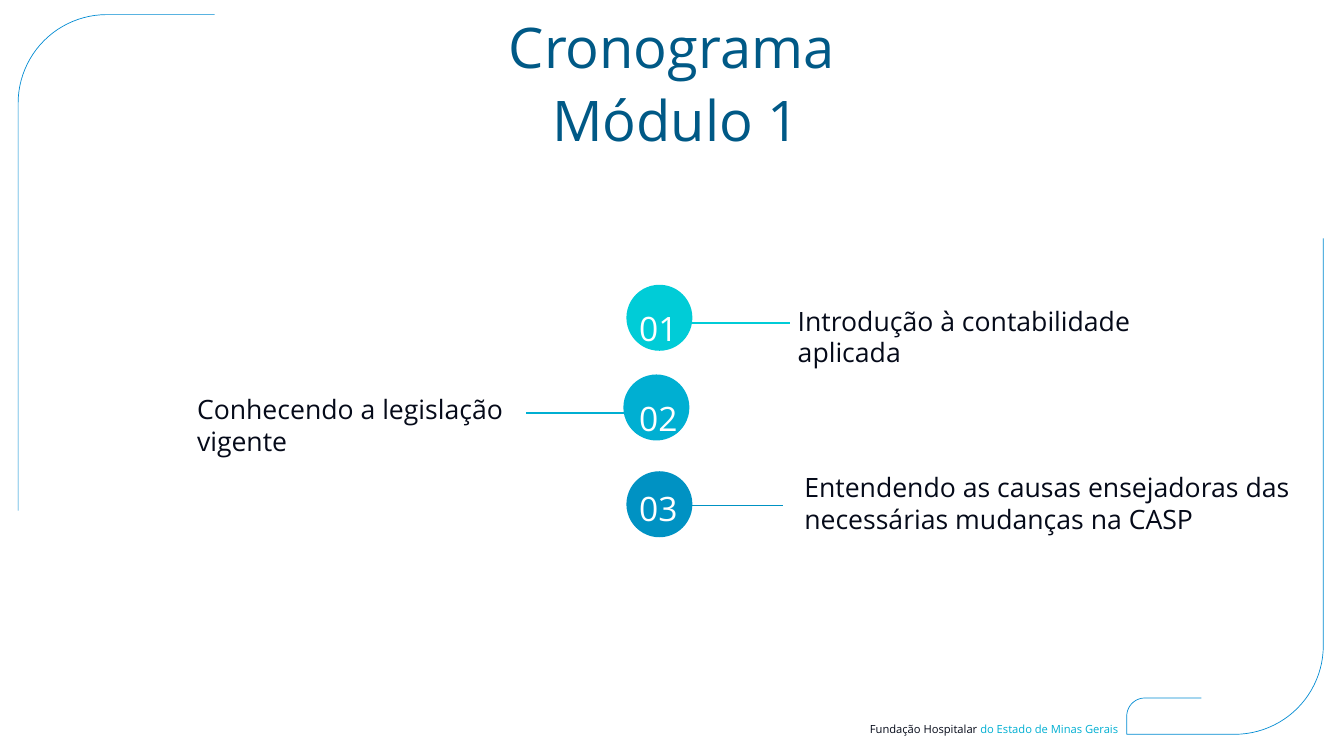
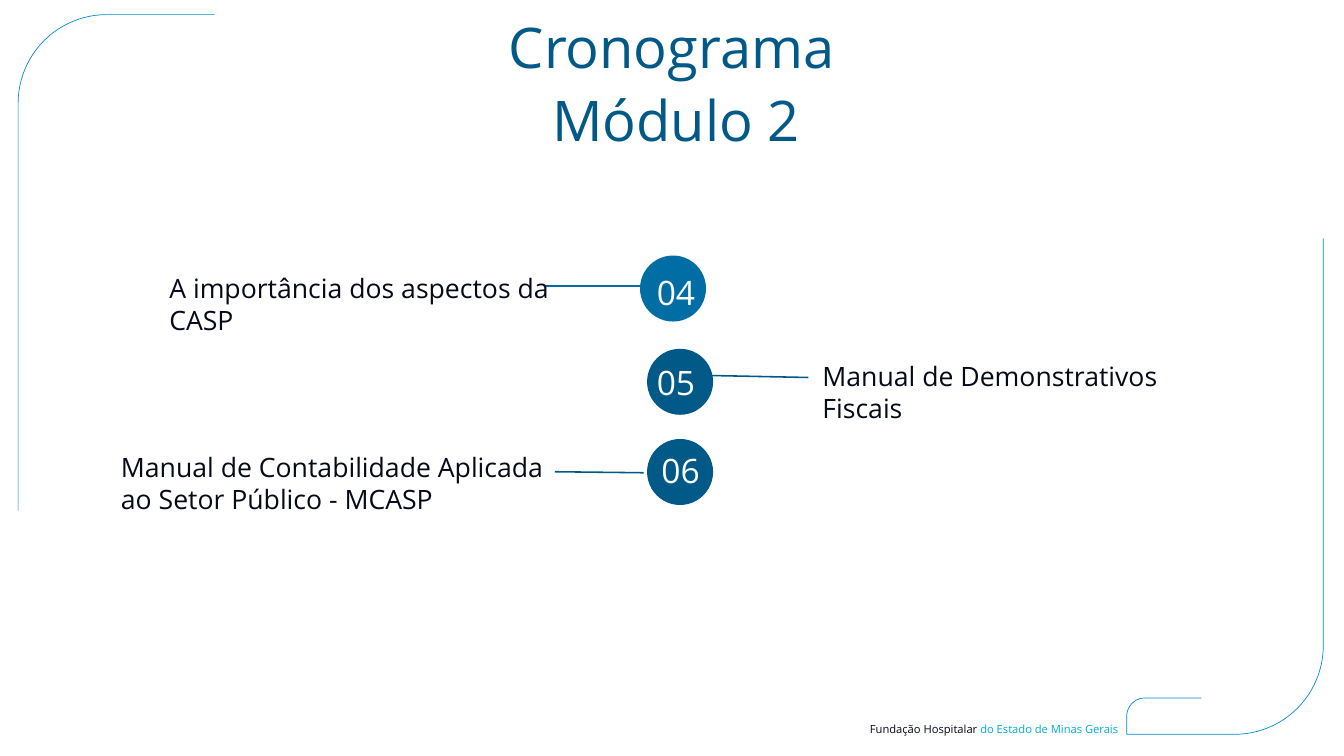
"""Build the two schedule slides, one for each course module."""
from math import cos, radians, sin

from lxml.etree import SubElement
from pptx import Presentation
from pptx.dml.color import RGBColor as Rgb
from pptx.enum.shapes import MSO_CONNECTOR as Conn, MSO_SHAPE as Geo
from pptx.enum.text import MSO_ANCHOR as Anchor, MSO_AUTO_SIZE as Fit, PP_ALIGN as Align
from pptx.oxml.ns import qn
from pptx.util import Inches, Pt

COLORS = {
    "ink": "050A19", "white": "FFFFFF", "title": "005986", "frame": "008BD2",
    "aqua": "00CCD7", "cyan": "00AFD2", "blue": "0092C3", "deep": "006DA4",
    "navy": "005986",
}
FONT = "Open Sans"
DISC = 1.31
FRAME = {"margin_left": 0, "margin_top": 0, "margin_right": 0, "margin_bottom": 0,
         "word_wrap": True, "vertical_anchor": Anchor.TOP}
HEAD = {"size": 80, "align": Align.CENTER, "fit": Fit.NONE}

MODULES = [
    ("Módulo 1", [
        {"num": "01", "color": "aqua", "disc": (12.43, 5.65), "mark": (12.55, 5.94),
         "line": (13.72, 6.41, 15.68, 6.41), "label": (15.83, 6.04, 7.69),
         "text": "Introdução à contabilidade aplicada"},
        {"num": "02", "color": "cyan", "disc": (12.37, 7.43), "mark": (12.55, 7.74),
         "line": (10.44, 8.19, 12.41, 8.19), "label": (3.91, 7.8, 7.37),
         "text": "Conhecendo a legislação vigente"},
        {"num": "03", "color": "blue", "disc": (12.43, 9.35), "mark": (12.55, 9.53),
         "line": (13.58, 10.03, 15.54, 10.03), "label": (15.96, 9.35, 9.78),
         "text": "Entendendo as causas ensejadoras das necessárias mudanças na CASP"},
    ]),
    ("Módulo 2", [
        {"num": "04", "color": "deep", "disc": (12.7, 5.07), "mark": (12.9, 5.23),
         "line": (10.8, 5.68, 12.76, 5.68), "label": (3.36, 5.4, 7.91),
         "text": "A importância dos aspectos da CASP"},
        {"num": "05", "color": "navy", "disc": (12.84, 6.92), "mark": (12.9, 7.02),
         "line": (14.08, 7.45, 16.04, 7.49), "label": (16.32, 7.15, 7.95),
         "text": "Manual de Demonstrativos Fiscais"},
        {"num": "06", "color": "navy", "disc": (12.84, 8.71), "mark": (12.99, 8.76),
         "line": (11.01, 9.36, 12.77, 9.38), "label": (2.4, 8.95, 8.47),
         "text": "Manual de Contabilidade Aplicada ao Setor Público - MCASP"},
    ]),
]


def paint(name):
    return Rgb.from_string(COLORS[name])


def apply(item, values):
    for key, value in values.items():
        setattr(item, key, value)


def write(shape, runs, size, align=Align.LEFT, space=1.0, fit=Fit.SHAPE_TO_FIT_TEXT):
    frame = shape.text_frame
    apply(frame, {**FRAME, "auto_size": fit})
    para = frame.paragraphs[0]
    apply(para, {"alignment": align, "line_spacing": space})
    for text, color in runs:
        run = para.add_run()
        run.text = text
        apply(run.font, {"name": FONT, "size": Pt(size)})
        run.font.color.rgb = paint(color)


def add_text(slide, box, runs, size, **style):
    shape = slide.shapes.add_textbox(*map(Inches, box))
    write(shape, runs, size, **style)


def add_title(slide, text):
    shape = slide.shapes.title
    box = map(Inches, (1.83, 0.24, 23, 1.27))
    apply(shape, dict(zip(("left", "top", "width", "height"), box)))
    write(shape, [(text, "title")], **HEAD)


def arc(x, y, radius, start, end, steps=24):
    angles = [radians(start + (end - start) * i / steps) for i in range(steps + 1)]
    return [(x + radius * cos(a), y + radius * sin(a)) for a in angles]


def add_path(slide, points):
    dots = [(Inches(x), Inches(y)) for x, y in points]
    pen = slide.shapes.build_freeform(*dots[0])
    pen.add_line_segments(dots[1:], close=False)
    shape = pen.convert_to_shape()
    shape.shadow.inherit = False
    shape.fill.background()
    shape.line.color.rgb = paint("frame")
    shape.line.width = Pt(1)


def add_frame(slide):
    add_path(slide, [(26.26, 4.73), *arc(24.5, 12.81, 1.76, 0, 90), (22.36, 14.57),
                     *arc(22.72, 14.21, 0.36, 180, 270), (23.84, 13.85)])
    add_path(slide, [(0.36, 10.13), *arc(2.12, 2.05, 1.76, 180, 270), (4.26, 0.29)])
    add_text(slide, (16.57, 14.33, 5.62, 0.27),
             [("Fundação Hospitalar ", "ink"), ("do Estado de Minas Gerais", "cyan")],
             16, align=Align.RIGHT)


def add_disc(slide, spot, color):
    box = map(Inches, (*spot, DISC, DISC))
    shape = slide.shapes.add_shape(Geo.OVAL, *box)
    shape.shadow.inherit = False
    shape.fill.solid()
    shape.fill.fore_color.rgb = paint(color)
    shape.line.fill.background()


def add_line(slide, ends, color):
    line = slide.shapes.add_connector(Conn.STRAIGHT, *map(Inches, ends))
    line.line.color.rgb = paint(color)
    line.line.width = Pt(2.25)
    SubElement(line._element.spPr, qn("a:effectLst"))


def add_topic(slide, topic):
    add_disc(slide, topic["disc"], topic["color"])
    add_line(slide, topic["line"], topic["color"])
    add_text(slide, (*topic["mark"], 1.03, 0.9), [(topic["num"], "white")], 48,
             align=Align.CENTER, space=1.2)
    add_text(slide, (*topic["label"], 0.64), [(topic["text"], "ink")], 38)


def main():
    deck = Presentation()
    apply(deck, {"slide_width": Inches(26.67), "slide_height": Inches(15)})
    for name, topics in MODULES:
        slide = deck.slides.add_slide(deck.slide_layouts[5])
        add_frame(slide)
        add_title(slide, "Cronograma")
        for topic in topics:
            add_topic(slide, topic)
        add_text(slide, (1.92, 1.69, 23, 1.27), [(name, "title")], **HEAD)
    deck.save("out.pptx")


if __name__ == "__main__":
    main()
